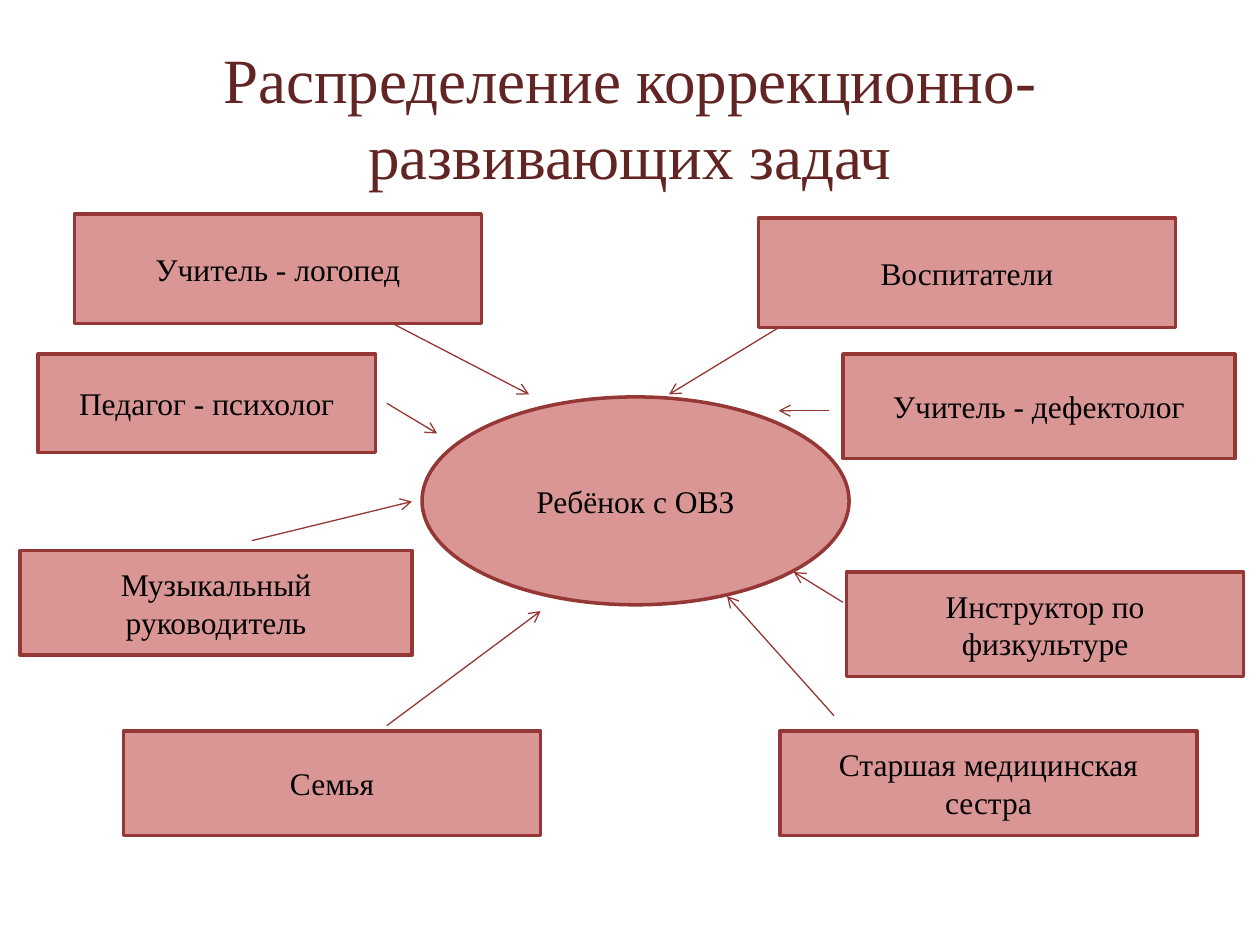
from lxml.etree import SubElement
from pptx import Presentation
from pptx.dml.color import RGBColor
from pptx.enum.shapes import MSO_CONNECTOR as CONN, MSO_SHAPE as SHAPE
from pptx.enum.text import MSO_ANCHOR as ANCHOR, MSO_AUTO_SIZE as AUTO, PP_ALIGN as ALIGN
from pptx.oxml.ns import qn
from pptx.util import Pt

FONT = "Times New Roman"
PINK = RGBColor(0xD9, 0x96, 0x94)
RED = RGBColor(0x95, 0x37, 0x35)
MAROON = RGBColor(0x63, 0x25, 0x23)
BLACK = RGBColor(0, 0, 0)

CHILD = ("Ребёнок с ОВЗ", 229.7, 104.4, 244, 118.8)
ROLES = [
    ("Учитель - логопед", 31, 0, 232.6, 62.6),
    ("Воспитатели", 421.9, 2.2, 238.3, 62.6),
    ("Педагог - психолог", 10.1, 79.9, 193, 56.2),
    ("Учитель - дефектолог", 470.2, 79.9, 223.9, 59.8),
    ("Музыкальный руководитель", 0, 192.2, 223.9, 59.8),
    ("Инструктор по физкультуре", 472.3, 204.5, 226.8, 59.8),
    ("Семья", 59.1, 295.2, 238.3, 59.8),
    ("Старшая медицинская сестра", 434.2, 295.2, 238.3, 59.8),
]
ARROWS = [
    (211.7, 61.9, 290.9, 103),
    (433.5, 64.8, 370.8, 103),
    (209.5, 108, 238.3, 125.3),
    (462.3, 112.3, 433.5, 112.3),
    (132.5, 186.5, 223.9, 164.2),
    (470.2, 221.8, 442.1, 204.5),
    (209.5, 292.3, 297.4, 226.8),
    (465.1, 286.6, 403.9, 218.2),
]


def write(sp, text, size=18, color=BLACK):
    """Fill a shape with centred text."""
    tf = sp.text_frame
    tf.word_wrap = True
    tf.auto_size = AUTO.NONE
    tf.vertical_anchor = ANCHOR.MIDDLE
    p = tf.paragraphs[0]
    p.alignment = ALIGN.CENTER
    r = p.add_run()
    r.text = text
    r.font.name, r.font.size = FONT, Pt(size)
    r.font.color.rgb = color


def add_node(s, kind, text, x, y, w, h):
    """Add a labelled, outlined shape."""
    sp = s.shapes.add_shape(kind, Pt(x), Pt(y), Pt(w), Pt(h))
    sp.shadow.inherit = False
    sp.fill.solid()
    sp.fill.fore_color.rgb = PINK
    sp.line.color.rgb = RED
    sp.line.width = Pt(2)
    write(sp, text)


def add_arrow(s, x1, y1, x2, y2):
    """Add a thin line with an open arrowhead at its end."""
    line = s.shapes.add_connector(CONN.STRAIGHT, Pt(x1), Pt(y1), Pt(x2), Pt(y2))
    line.line.color.rgb = RED
    line.line.width = Pt(0.75)
    SubElement(line.line._get_or_add_ln(), qn("a:tailEnd"), type="arrow")
    SubElement(line._element.spPr, qn("a:effectLst"))


def add_title(s, text, x, y, w, h):
    """Place and format the slide title."""
    sp = s.shapes.title
    sp.left, sp.top, sp.width, sp.height = Pt(x), Pt(y), Pt(w), Pt(h)
    write(sp, text, size=36, color=MAROON)


def add_diagram(s, left, top):
    """Draw the child, the roles around it and the arrows between them."""
    nodes = [(SHAPE.OVAL, CHILD)] + [(SHAPE.RECTANGLE, role) for role in ROLES]
    for kind, (text, x, y, w, h) in nodes:
        add_node(s, kind, text, left + x, top + y, w, h)
    for x1, y1, x2, y2 in ARROWS:
        add_arrow(s, left + x1, top + y1, left + x2, top + y2)


def main():
    """Build and save the slide."""
    prs = Presentation()
    prs.slide_width, prs.slide_height = Pt(720), Pt(540)
    s = prs.slides.add_slide(prs.slide_layouts[5])
    add_title(s, "Распределение коррекционно-развивающих задач", 36, 21.6, 648, 90)
    add_diagram(s, 11.5, 122.4)
    prs.save("out.pptx")


if __name__ == "__main__":
    main()
